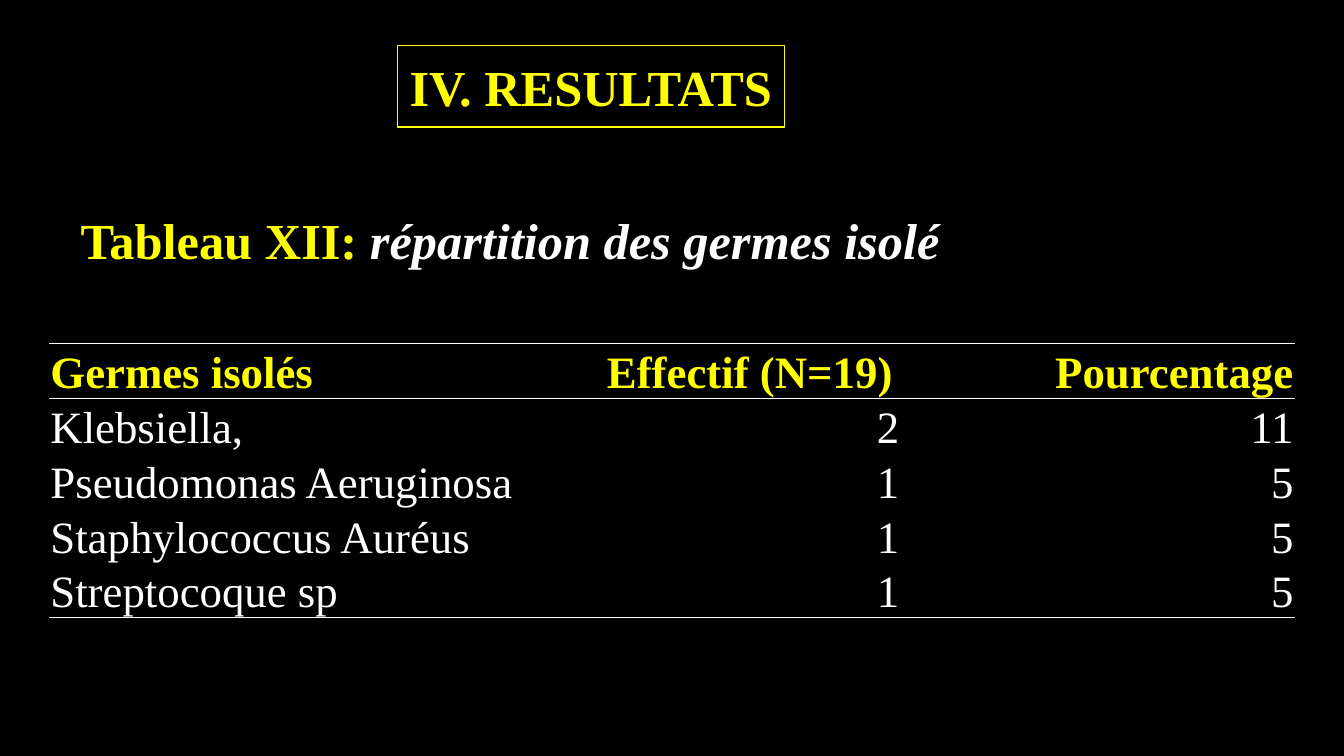
import pptx
import pptx.util
import pptx.dml.color
import pptx.enum.shapes
import pptx.enum.text
import pptx.oxml.ns
from lxml import etree

Inches = pptx.util.Inches
Pt = pptx.util.Pt
ALIGN = pptx.enum.text.PP_ALIGN
ANCHOR = pptx.enum.text.MSO_ANCHOR

THEME = {
    "font": "Times New Roman",
    "bg": "000000",
    "accent": "FFFF00",
    "text": "FFFFFF",
    "title": 36,
    "table": 32,
    "line": 1,
}


def add_run(p, text, size, color, bold=False, italic=False):
    r = p.add_run()
    r.text = text
    r.font.name = THEME["font"]
    r.font.size = Pt(THEME[size])
    r.font.bold = bold
    r.font.italic = italic
    r.font.color.rgb = pptx.dml.color.RGBColor.from_string(THEME[color])


def set_borders(cell, ruled):
    qn = pptx.oxml.ns.qn
    tcPr = cell._tc.get_or_add_tcPr()
    for i, side in enumerate("LRTB"):
        ln = etree.Element(qn(f"a:ln{side}"), w=str(Pt(THEME["line"])))
        if side in ruled:
            fill = etree.SubElement(ln, qn("a:solidFill"))
            etree.SubElement(fill, qn("a:srgbClr"), val=THEME["text"])
        else:
            etree.SubElement(ln, qn("a:noFill"))
        tcPr.insert(i, ln)


prs = pptx.Presentation()
prs.slide_width = Inches(13.33)
prs.slide_height = Inches(7.5)
s = prs.slides.add_slide(prs.slide_layouts[6])
s.background.fill.solid()
s.background.fill.fore_color.rgb = pptx.dml.color.RGBColor.from_string(THEME["bg"])

sp = s.shapes.add_shape(pptx.enum.shapes.MSO_SHAPE.RECTANGLE,
                        Inches(3.94), Inches(0.45), Inches(3.84), Inches(0.81))
sp.shadow.inherit = False
sp.fill.background()
sp.line.color.rgb = pptx.dml.color.RGBColor.from_string(THEME["accent"])
sp.line.width = Pt(THEME["line"])
tf = sp.text_frame
tf.word_wrap = True
tf.vertical_anchor = ANCHOR.MIDDLE
p = tf.paragraphs[0]
p.alignment = ALIGN.CENTER
add_run(p, "IV. RESULTATS", "title", "accent", bold=True)

rows = [
    ("Germes isolés", "Effectif (N=19)", "Pourcentage"),
    ("Klebsiella,", "2", "11"),
    ("Pseudomonas Aeruginosa", "1", "5"),
    ("Staphylococcus Auréus", "1", "5"),
    ("Streptocoque sp", "1", "5"),
]
col_widths = [5.52, 2.92, 3.91]
rules = {0: "TB", 1: "T", len(rows) - 1: "B"}

table = s.shapes.add_table(len(rows), len(col_widths), Inches(0.49), Inches(3.41),
                           Inches(sum(col_widths)), Inches(2.72)).table
table.first_row = False
table.horz_banding = False
for col, width in zip(table.columns, col_widths):
    col.width = Inches(width)

for i, row in enumerate(rows):
    header = i == 0
    for j, text in enumerate(row):
        cell = table.cell(i, j)
        cell.fill.background()
        cell.vertical_anchor = ANCHOR.BOTTOM
        cell.margin_left = cell.margin_right = cell.margin_top = Inches(0.01)
        cell.margin_bottom = 0
        set_borders(cell, rules.get(i, ""))
        p = cell.text_frame.paragraphs[0]
        left = j == 0 or (header and j == 1)
        p.alignment = ALIGN.LEFT if left else ALIGN.RIGHT
        add_run(p, text, "table", "accent" if header else "text", bold=header)

tf = s.shapes.add_textbox(Inches(0.7), Inches(2.03), Inches(10.01), Inches(0.71)).text_frame
tf.word_wrap = True
tf.auto_size = pptx.enum.text.MSO_AUTO_SIZE.SHAPE_TO_FIT_TEXT
p = tf.paragraphs[0]
add_run(p, "Tableau XII: ", "title", "accent", bold=True)
add_run(p, "répartition des germes isolé", "title", "text", bold=True, italic=True)

prs.save("out.pptx")
